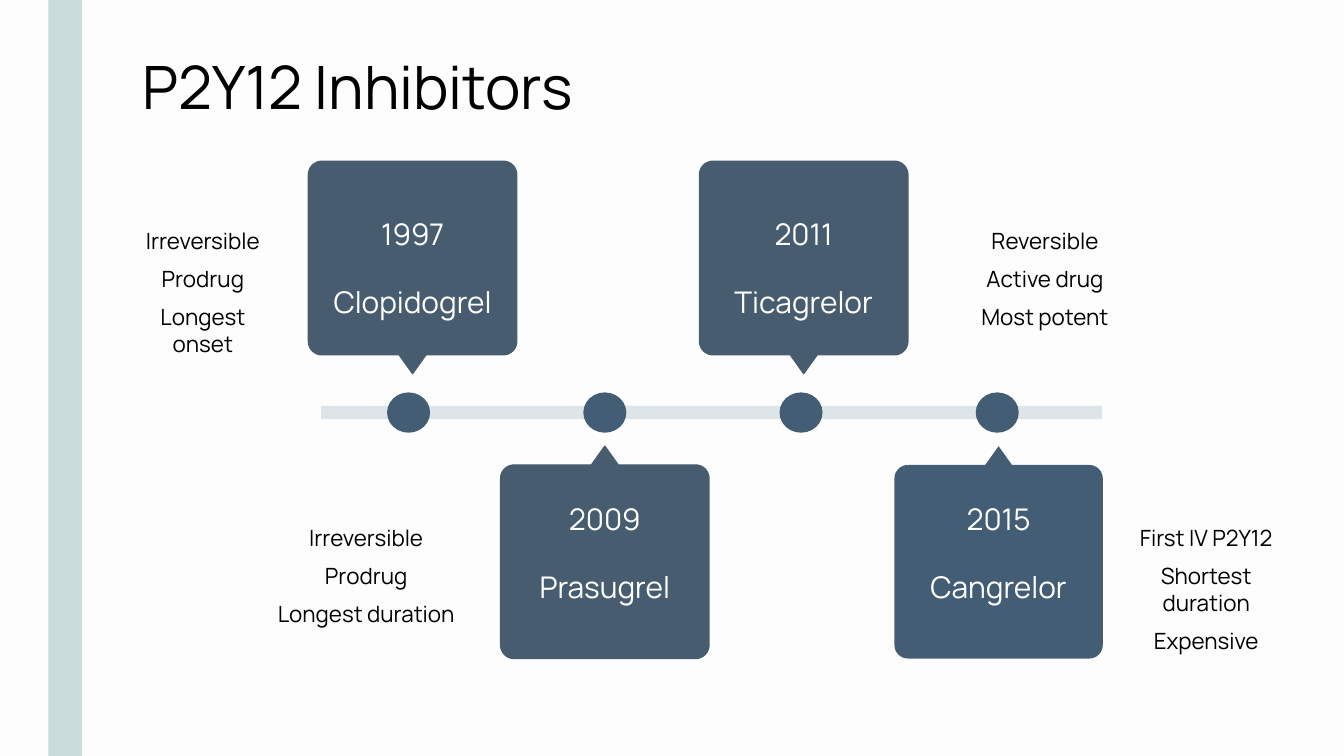
"""Build a timeline slide of the P2Y12 inhibitors."""
from math import cos, pi, sin

from pptx import Presentation
from pptx.dml.color import RGBColor
from pptx.enum.shapes import MSO_SHAPE
from pptx.enum.text import MSO_ANCHOR, PP_ALIGN
from pptx.util import Inches, Pt

TITLE = "P2Y12 Inhibitors"
DRUGS = [
    dict(year="1997", name="Clopidogrel", facts=["Irreversible", "Prodrug", "Longest onset"],
         card_x=3.07, facts_x=0.86, facts_w=1.3),
    dict(year="2009", name="Prasugrel", facts=["Irreversible", "Prodrug", "Longest duration"],
         card_x=4.5, facts_x=1.95, facts_w=1.55),
    dict(year="2011", name="Ticagrelor", facts=["Reversible", "Active drug", "Most potent"],
         card_x=5.98, facts_x=7, facts_w=1.55),
    dict(year="2015", name="Cangrelor", facts=["First IV P2Y12", "Shortest duration", "Expensive"],
         card_x=7.43, facts_x=8.2, facts_w=1.55),
]

FONT = "Manrope"
BACKGROUND = RGBColor(0xFD, 0xFD, 0xFD)
STRIPE = RGBColor(0xCA, 0xDC, 0xDC)
SLATE = RGBColor(0x47, 0x5D, 0x6F)
BLUE = RGBColor(0x43, 0x5D, 0x74)
AXIS = RGBColor(0xDE, 0xE5, 0xE9)
BLACK = RGBColor(0, 0, 0)
WHITE = RGBColor(0xFF, 0xFF, 0xFF)

SLIDE_W = 10
SLIDE_H = SLIDE_W * 9 / 16
AXIS_LEFT, AXIS_W, AXIS_H, AXIS_Y = 2.39, 5.81, 0.1, 3.07
DOT_X, DOT_STEP, DOT_W, DOT_H = 3.04, 1.46, 0.32, 0.3
CARD_W, CARD_H, RADIUS, POINTER, ARC_STEPS = 1.55, 1.44, 0.1, 0.14, 8
CARD_ROWS = (1.92, 4.18)
FACT_ROWS = (1.64, 3.85)
CORNERS = [(1, 1), (1, -1), (-1, -1), (-1, 1)]

prs = Presentation()
prs.slide_width, prs.slide_height = Inches(SLIDE_W), Inches(SLIDE_H)
s = prs.slides.add_slide(prs.slide_layouts[6])
s.background.fill.solid()
s.background.fill.fore_color.rgb = BACKGROUND


def paint(sp, fill, line=None):
    sp.shadow.inherit = False
    sp.fill.solid()
    sp.fill.fore_color.rgb = fill
    if line is None:
        sp.line.fill.background()
    else:
        sp.line.color.rgb = line
        sp.line.width = Pt(0.75)


def add_block(kind, x, y, w, h, fill):
    paint(s.shapes.add_shape(kind, Inches(x), Inches(y), Inches(w), Inches(h)), fill)


def write(tf, lines, size, color, align=PP_ALIGN.CENTER, gap=0):
    tf.word_wrap = True
    for i, text in enumerate(lines):
        p = tf.paragraphs[0] if i == 0 else tf.add_paragraph()
        p.alignment = align
        if i:
            p.space_before = Pt(gap)
        r = p.add_run()
        r.text = text
        r.font.name, r.font.size, r.font.color.rgb = FONT, Pt(size), color


def add_text(x, y, w, h, lines, **style):
    box = s.shapes.add_textbox(Inches(x), Inches(y), Inches(w), Inches(h))
    write(box.text_frame, lines, **style)


def add_card(cx, cy, side, lines, fill, line):
    dx, dy = CARD_W / 2, CARD_H / 2
    outline = [(-0.1, dy), (0, dy + POINTER), (0.1, dy)]
    for k, (sx, sy) in enumerate(CORNERS):
        for step in range(ARC_STEPS + 1):
            angle = (1 - k - step / ARC_STEPS) * pi / 2
            outline.append((sx * (dx - RADIUS) + RADIUS * cos(angle),
                            sy * (dy - RADIUS) + RADIUS * sin(angle)))
    points = [(Inches(cx + x), Inches(cy + side * y)) for x, y in outline]
    builder = s.shapes.build_freeform(*points[0])
    builder.add_line_segments(points[1:], close=True)
    sp = builder.convert_to_shape()
    paint(sp, fill, line)
    tf = sp.text_frame
    tf.vertical_anchor = MSO_ANCHOR.MIDDLE
    tf.margin_left = tf.margin_right = tf.margin_top = tf.margin_bottom = Inches(0.1)
    write(tf, lines, size=16, color=WHITE, gap=17)


add_block(MSO_SHAPE.RECTANGLE, 0.36, 0, 0.25, SLIDE_H, STRIPE)
add_text(0.96, 0.32, 7.06, 0.64, [TITLE], size=32, color=BLACK, align=PP_ALIGN.LEFT)
add_block(MSO_SHAPE.RECTANGLE, AXIS_LEFT, AXIS_Y - AXIS_H / 2, AXIS_W, AXIS_H, AXIS)

for i, drug in enumerate(DRUGS):
    row = i % 2
    last = i == len(DRUGS) - 1
    add_card(drug["card_x"], CARD_ROWS[row], -1 if row else 1, [drug["year"], drug["name"]],
             BLUE if last else SLATE, None if last else SLATE)
    add_block(MSO_SHAPE.OVAL, DOT_X + i * DOT_STEP - DOT_W / 2, AXIS_Y - DOT_H / 2,
              DOT_W, DOT_H, BLUE)
    add_text(drug["facts_x"], FACT_ROWS[row], drug["facts_w"], 0.88, drug["facts"],
             size=12, color=BLACK, gap=6)

prs.save("out.pptx")
